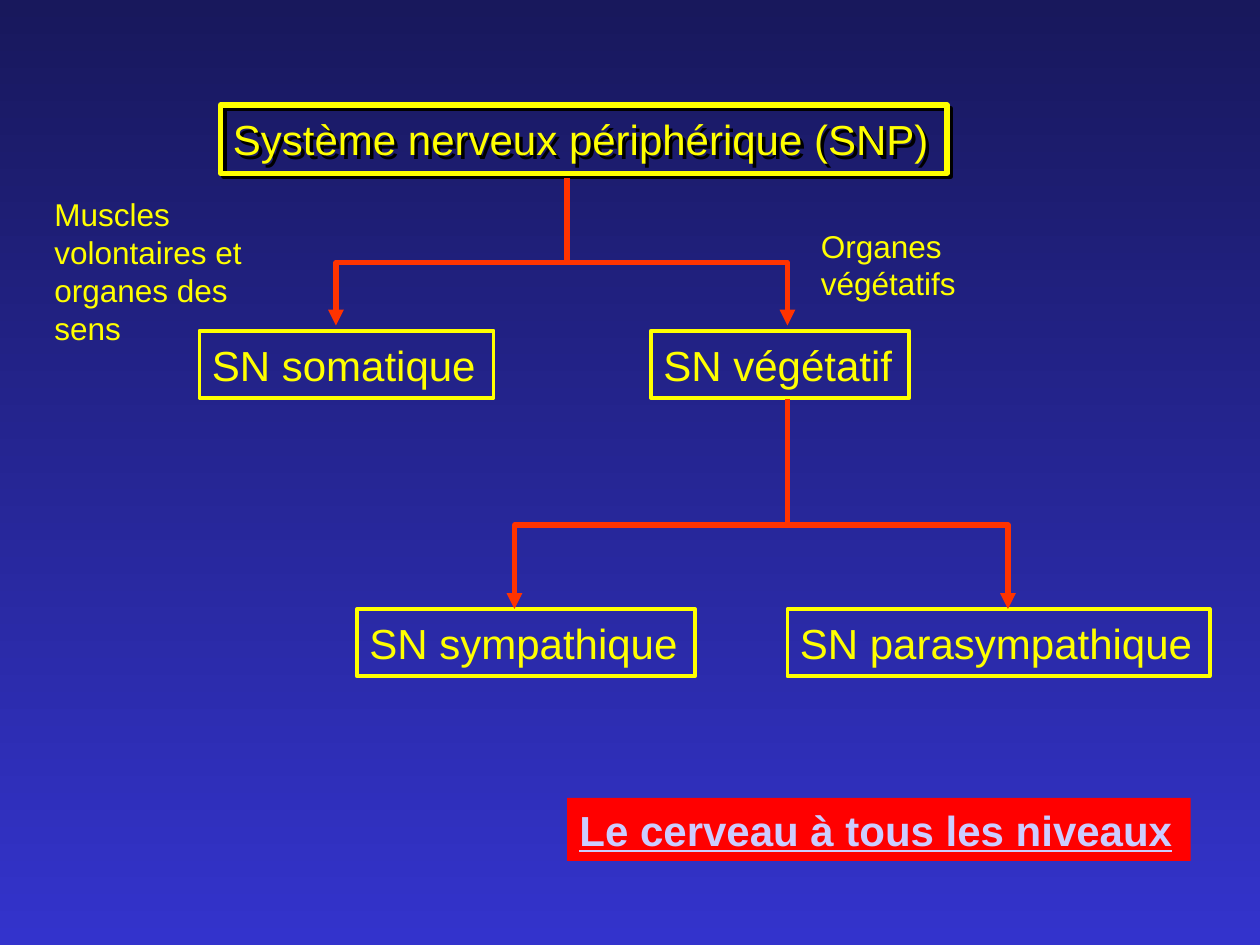
from dataclasses import dataclass

from lxml.etree import SubElement
from pptx import Presentation
from pptx.dml.color import RGBColor
from pptx.enum.shapes import MSO_CONNECTOR, MSO_SHAPE
from pptx.enum.text import MSO_ANCHOR, MSO_AUTO_SIZE, PP_ALIGN
from pptx.oxml.ns import qn
from pptx.util import Inches, Length, Pt


@dataclass(frozen=True)
class Theme:
    font: str = "Arial"
    yellow: str = "FFFF00"
    orange: str = "FF3300"
    red: str = "FF0000"
    lavender: str = "CCCCFF"
    shadow: str = "000000"
    sky_top: str = "18185C"
    sky_bottom: str = "3333CC"
    box_size: float = 24
    note_size: float = 18
    title_line: float = 3
    box_line: float = 2.25
    branch_line: float = 3


@dataclass(frozen=True)
class Box:
    text: str
    col: float
    row: float
    cols: float
    rows: float = 6.4
    line: float = 0
    fill: str = ""
    shadow: bool = False


@dataclass(frozen=True)
class Note:
    text: str
    col: float
    row: float
    cols: float
    rows: float


@dataclass(frozen=True)
class Branch:
    """A stem that drops to a bar with an arrow at both ends."""
    stem_col: float
    stem_row: float
    bar_row: float
    left: float
    right: float
    tip_row: float


THEME = Theme()

# The slide is a grid of 120 columns by 90 rows, 12 to the inch
COLUMNS, ROWS = 120, 90

SYSTEMS = [
    Box("Système nerveux périphérique (SNP)", 21, 10, 69.2, 6.5,
        line=THEME.title_line, shadow=True),
    Box("SN sympathique", 34, 58, 32.2, line=THEME.box_line),
    Box("SN parasympathique", 75, 58, 40.2, line=THEME.box_line),
    Box("SN somatique", 19, 31.5, 28, line=THEME.box_line),
    Box("SN végétatif", 62, 31.5, 24.6, line=THEME.box_line),
]
CONCLUSION = Box("Le cerveau à tous les niveaux", 54, 76, 59.4, 6, fill=THEME.red)
NOTES = [
    Note("Muscles volontaires et organes des sens", 4, 18, 25, 15.6),
    Note("Organes végétatifs", 77, 21, 25, 8.4),
]
BRANCHES = [
    Branch(75, 38, 50, left=49, right=96, tip_row=58),
    Branch(54, 17, 25, left=32, right=75, tip_row=31),
]


def grid(units: float) -> Length:
    return Inches(units / 12)


def rgb(color: str) -> RGBColor:
    return RGBColor.from_string(color)


def place(item: Box | Note) -> list[Length]:
    return [grid(n) for n in (item.col, item.row, item.cols, item.rows)]


def write(shape, text: str, size: float, color: str, anchor: MSO_ANCHOR,
          **extra: bool) -> None:
    frame = shape.text_frame
    frame_format = {"word_wrap": True, "auto_size": MSO_AUTO_SIZE.NONE,
                    "vertical_anchor": anchor}
    for name, value in frame_format.items():
        setattr(frame, name, value)
    paragraph = frame.paragraphs[0]
    paragraph.alignment = PP_ALIGN.LEFT
    run = paragraph.add_run()
    run.text = text
    run_format = {"name": THEME.font, "size": Pt(size), **extra}
    for name, value in run_format.items():
        setattr(run.font, name, value)
    run.font.color.rgb = rgb(color)


def add_drop_shadow(shape) -> None:
    effects = shape._element.spPr.find(qn("a:effectLst"))
    shadow = SubElement(effects, qn("a:outerShdw"), dist=str(Pt(2.8)),
                        dir="2700000", algn="ctr", rotWithShape="0")
    SubElement(shadow, qn("a:srgbClr"), val=THEME.shadow)


def add_box(slide, box: Box, color: str, **extra: bool) -> None:
    shape = slide.shapes.add_shape(MSO_SHAPE.RECTANGLE, *place(box))
    shape.shadow.inherit = False
    if box.fill:
        shape.fill.solid()
        shape.fill.fore_color.rgb = rgb(box.fill)
    else:
        shape.fill.background()
    if box.line:
        shape.line.color.rgb = rgb(THEME.yellow)
        shape.line.width = Pt(box.line)
    else:
        shape.line.fill.background()
    if box.shadow:
        add_drop_shadow(shape)
    write(shape, box.text, THEME.box_size, color, MSO_ANCHOR.MIDDLE, **extra)


def add_note(slide, note: Note) -> None:
    shape = slide.shapes.add_textbox(*place(note))
    write(shape, note.text, THEME.note_size, THEME.yellow, MSO_ANCHOR.TOP)


def style_branch_line(shape) -> None:
    shape.line.color.rgb = rgb(THEME.orange)
    shape.line.width = Pt(THEME.branch_line)


def add_branch(slide, branch: Branch) -> None:
    # Bar with its two arrows
    builder = slide.shapes.build_freeform(grid(branch.left), grid(branch.tip_row))
    corners = [(branch.left, branch.bar_row), (branch.right, branch.bar_row),
               (branch.right, branch.tip_row)]
    builder.add_line_segments([(grid(x), grid(y)) for x, y in corners], close=False)
    bar = builder.convert_to_shape()
    bar.shadow.inherit = False
    bar.fill.background()
    style_branch_line(bar)
    outline = bar.line._get_or_add_ln()
    SubElement(outline, qn("a:round"))
    for end in ("a:headEnd", "a:tailEnd"):
        SubElement(outline, qn(end), type="triangle")

    # Stem from the parent system
    x = grid(branch.stem_col)
    stem = slide.shapes.add_connector(MSO_CONNECTOR.STRAIGHT, x, grid(branch.stem_row),
                                      x, grid(branch.bar_row))
    style_branch_line(stem)
    SubElement(stem._element.spPr, qn("a:effectLst"))


def paint_background(slide) -> None:
    fill = slide.background.fill
    fill.gradient()
    fill.gradient_angle = 270
    for stop, color in zip(fill.gradient_stops, (THEME.sky_top, THEME.sky_bottom)):
        stop.color.rgb = rgb(color)


def main() -> None:
    deck = Presentation()
    deck.slide_width, deck.slide_height = grid(COLUMNS), grid(ROWS)
    slide = deck.slides.add_slide(deck.slide_layouts[6])
    paint_background(slide)

    # Nervous systems, the branches between them, and what they control
    for system in SYSTEMS:
        add_box(slide, system, THEME.yellow)
    for branch in BRANCHES:
        add_branch(slide, branch)
    for note in NOTES:
        add_note(slide, note)

    # Conclusion
    add_box(slide, CONCLUSION, THEME.lavender, bold=True, underline=True)
    deck.save("out.pptx")


if __name__ == "__main__":
    main()
